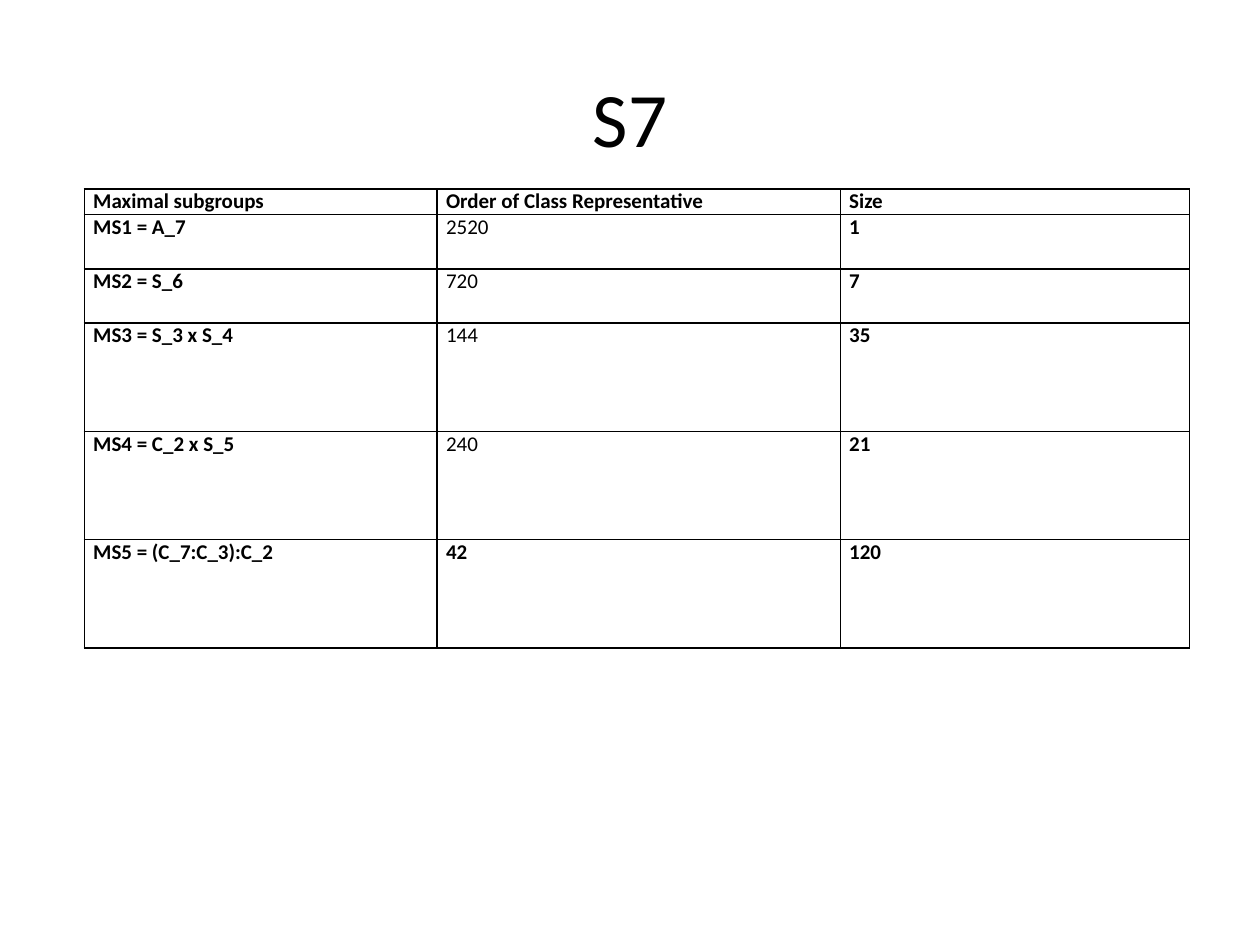
from lxml import etree
from pptx import Presentation
from pptx.dml.color import RGBColor
from pptx.enum.text import MSO_ANCHOR, PP_ALIGN
from pptx.oxml.ns import qn
from pptx.util import Inches, Pt

MIDDLE = MSO_ANCHOR.MIDDLE
CENTER = PP_ALIGN.CENTER
BLACK = RGBColor(0, 0, 0)
WHITE = RGBColor(255, 255, 255)
FONT = "Calibri"

TITLE = "S7"
SUBGROUPS = [
    ("Maximal subgroups", "Order of Class Representative", "Size"),
    ("MS1 = A_7", "2520", "1"),
    ("MS2 = S_6", "720", "7"),
    ("MS3 = S_3 x S_4", "144", "35"),
    ("MS4 = C_2 x S_5", "240", "21"),
    ("MS5 = (C_7:C_3):C_2", "42", "120"),
]
REGULAR_ORDERS = {"2520", "720", "144", "240"}
COLUMN_WIDTHS = [2.8, 3.2, 2.77]
ROW_HEIGHTS = [0.2, 0.43, 0.43, 0.86, 0.86, 0.86]


def style_font(paragraph, size, bold):
    font = paragraph.font
    font.name = FONT
    font.size = Pt(size)
    font.bold = bold
    font.color.rgb = BLACK


def add_borders(cell):
    properties = cell._tc.get_or_add_tcPr()
    for position, side in enumerate(("lnL", "lnR", "lnT", "lnB")):
        line = etree.Element(qn(f"a:{side}"), w=str(Pt(1)))
        fill = etree.SubElement(line, qn("a:solidFill"))
        etree.SubElement(fill, qn("a:srgbClr"), val=str(BLACK))
        properties.insert(position, line)


def fill_cell(cell, text):
    cell.text = text
    cell.margin_left = cell.margin_right = Inches(0.07)
    cell.margin_top = cell.margin_bottom = 0
    cell.fill.solid()
    cell.fill.fore_color.rgb = WHITE
    style_font(cell.text_frame.paragraphs[0], 12, text not in REGULAR_ORDERS)
    add_borders(cell)


def main():
    deck = Presentation()
    deck.slide_width, deck.slide_height = Inches(10), Inches(7.5)
    slide = deck.slides.add_slide(deck.slide_layouts[5])

    title = slide.shapes.title
    title.left, title.top = Inches(0.5), Inches(0.3)
    title.width, title.height = Inches(9), Inches(1.25)
    title.text_frame.text = TITLE
    title.text_frame.vertical_anchor = MIDDLE
    heading = title.text_frame.paragraphs[0]
    heading.alignment = CENTER
    style_font(heading, 44, False)

    subgroup_table = slide.shapes.add_table(
        len(SUBGROUPS), len(COLUMN_WIDTHS), Inches(0.67), Inches(1.5),
        Inches(sum(COLUMN_WIDTHS)), Inches(sum(ROW_HEIGHTS)),
    ).table
    for column, width in zip(subgroup_table.columns, COLUMN_WIDTHS):
        column.width = Inches(width)
    for row, height, texts in zip(subgroup_table.rows, ROW_HEIGHTS, SUBGROUPS):
        row.height = Inches(height)
        for cell, text in zip(row.cells, texts):
            fill_cell(cell, text)

    deck.save("out.pptx")


if __name__ == "__main__":
    main()
